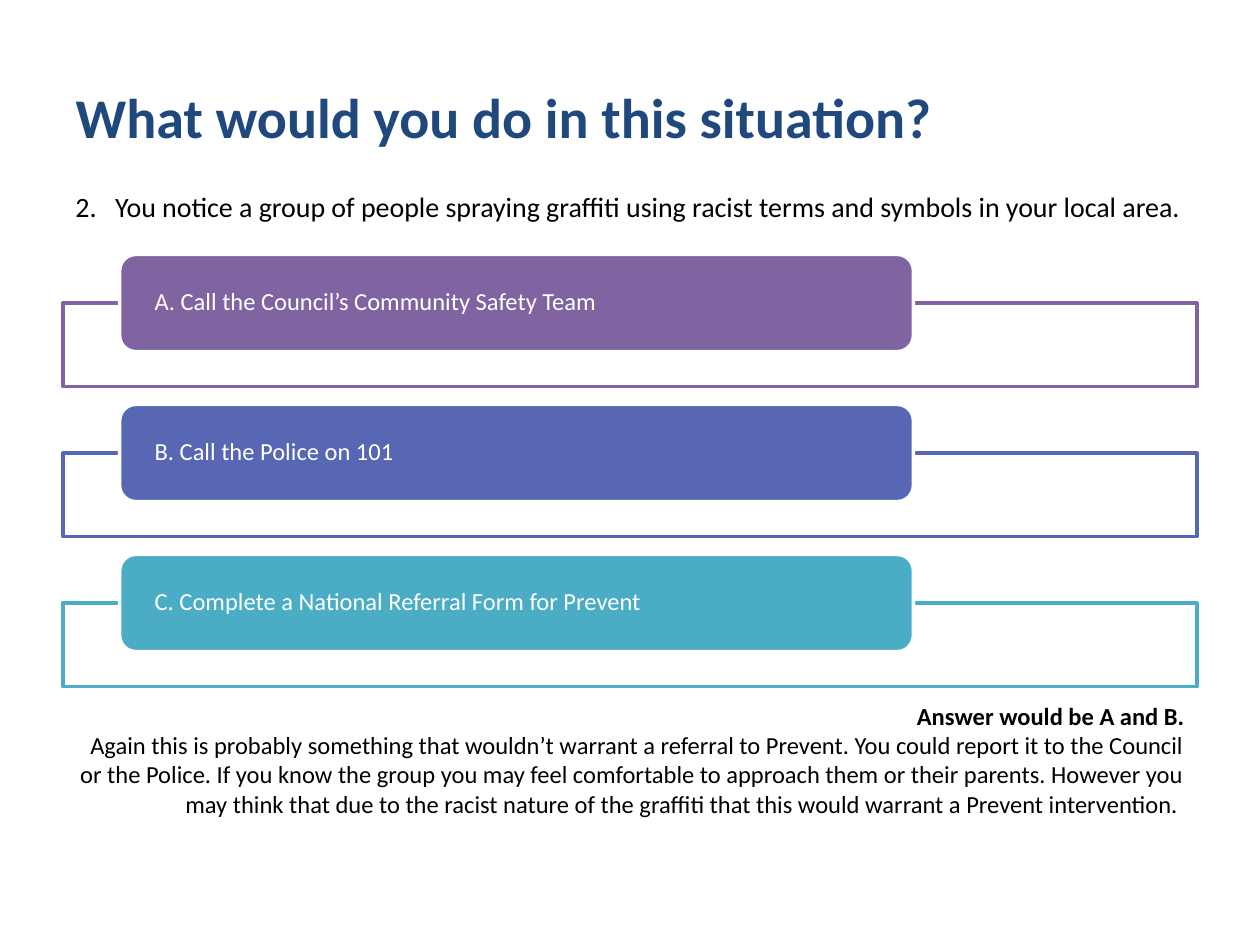
from dataclasses import dataclass

from lxml.etree import SubElement
from pptx import Presentation
from pptx.dml.color import RGBColor
from pptx.enum.shapes import MSO_SHAPE as Shape
from pptx.enum.text import MSO_ANCHOR as Anchor, PP_ALIGN as Align
from pptx.oxml.ns import qn
from pptx.util import Cm, Pt


@dataclass(frozen=True)
class Theme:
    font: str = "Calibri"
    title: str = "1F497D"
    ink: str = "000000"
    paper: str = "FFFFFF"
    options: tuple = ("8064A2", "5767B4", "4BACC6")
    title_size: int = 32
    question_size: int = 16
    body_size: int = 14
    line_width: int = 2


THEME = Theme()


@dataclass(frozen=True)
class Box:
    left: float
    top: float
    width: float
    height: float

    def lengths(self):
        return Cm(self.left), Cm(self.top), Cm(self.width), Cm(self.height)


def write(frame, text, *, size, color, bold=False, align=Align.LEFT,
          anchor=Anchor.MIDDLE, spacing=None, number=None, hanging=0.8, more=False):
    frame.word_wrap = True
    frame.vertical_anchor = anchor
    para = frame.add_paragraph() if more else frame.paragraphs[0]
    if number:
        props = para._p.get_or_add_pPr()
        props.set("marL", str(Cm(hanging)))
        props.set("indent", str(-Cm(hanging)))
        SubElement(props, qn("a:buFont"), typeface=THEME.font)
        SubElement(props, qn("a:buAutoNum"), type="arabicPeriod", startAt=str(number))
    para.alignment = align
    if spacing:
        para.line_spacing = spacing
    span = para.add_run()
    span.text = text
    span.font.name = THEME.font
    span.font.size = Pt(size)
    span.font.bold = bold
    span.font.color.rgb = RGBColor.from_string(color)


def draw(page, kind, box, *, fill, line):
    shape = page.shapes.add_shape(kind, *box.lengths())
    shape.shadow.inherit = False
    shape.fill.solid()
    shape.fill.fore_color.rgb = RGBColor.from_string(fill)
    shape.line.color.rgb = RGBColor.from_string(line)
    shape.line.width = Pt(THEME.line_width)
    return shape


def set_title(page, text, box):
    title = page.shapes.title
    title.left, title.top, title.width, title.height = box.lengths()
    write(title.text_frame, text, size=THEME.title_size, color=THEME.title, bold=True)


def add_question(page, number, text, box):
    frame = page.shapes.add_textbox(*box.lengths()).text_frame
    write(frame, text, size=THEME.question_size, color=THEME.ink, number=number)


def add_option(page, text, color, box):
    label_height = 1.96
    half = label_height / 2
    outline = Box(box.left, box.top + half, box.width, box.height - half)
    label_box = Box(box.left + box.width * 0.05, box.top, box.width * 0.7, label_height)
    draw(page, Shape.RECTANGLE, outline, fill=THEME.paper, line=color)
    label = draw(page, Shape.ROUNDED_RECTANGLE, label_box, fill=color, line=THEME.paper)
    frame = label.text_frame
    frame.margin_left = frame.margin_right = Cm(0.61)
    frame.margin_top = frame.margin_bottom = 0
    write(frame, text, size=THEME.body_size, color=THEME.paper, spacing=0.9)


def add_options(page, texts, box):
    gap = 0.36
    height = (box.height - gap * (len(texts) - 1)) / len(texts)
    for index, (text, color) in enumerate(zip(texts, THEME.options)):
        top = box.top + index * (height + gap)
        add_option(page, text, color, Box(box.left, top, box.width, height))


def add_answer(page, verdict, reason, box):
    frame = page.shapes.add_textbox(*box.lengths()).text_frame
    style = dict(size=THEME.body_size, color=THEME.ink, align=Align.RIGHT, anchor=Anchor.TOP)
    write(frame, verdict, bold=True, **style)
    write(frame, reason, more=True, **style)


def main():
    deck = Presentation()
    deck.slide_width, deck.slide_height = Cm(25.4), Cm(19.05)
    page = deck.slides.add_slide(deck.slide_layouts[5])
    left, width = 1.27, 22.86
    set_title(page, "What would you do in this situation?", Box(left, 0.76, width, 3.18))
    add_options(page, (
        "A. Call the Council’s Community Safety Team",
        "B. Call the Police on 101",
        "C. Complete a National Referral Form for Prevent",
    ), Box(left, 5.13, width, 8.71))
    add_question(
        page, 2,
        "You notice a group of people spraying graffiti using racist terms "
        "and symbols in your local area.",
        Box(left, 3.3, width, 1.7))
    add_answer(
        page, "Answer would be A and B.",
        "Again this is probably something that wouldn’t warrant a referral to Prevent. "
        "You could report it to the Council or the Police. If you know the group you may "
        "feel comfortable to approach them or their parents. However you may think that "
        "due to the racist nature of the graffiti that this would warrant a Prevent "
        "intervention. ",
        Box(left, 14, width, 2.64))
    deck.save("out.pptx")


if __name__ == "__main__":
    main()
